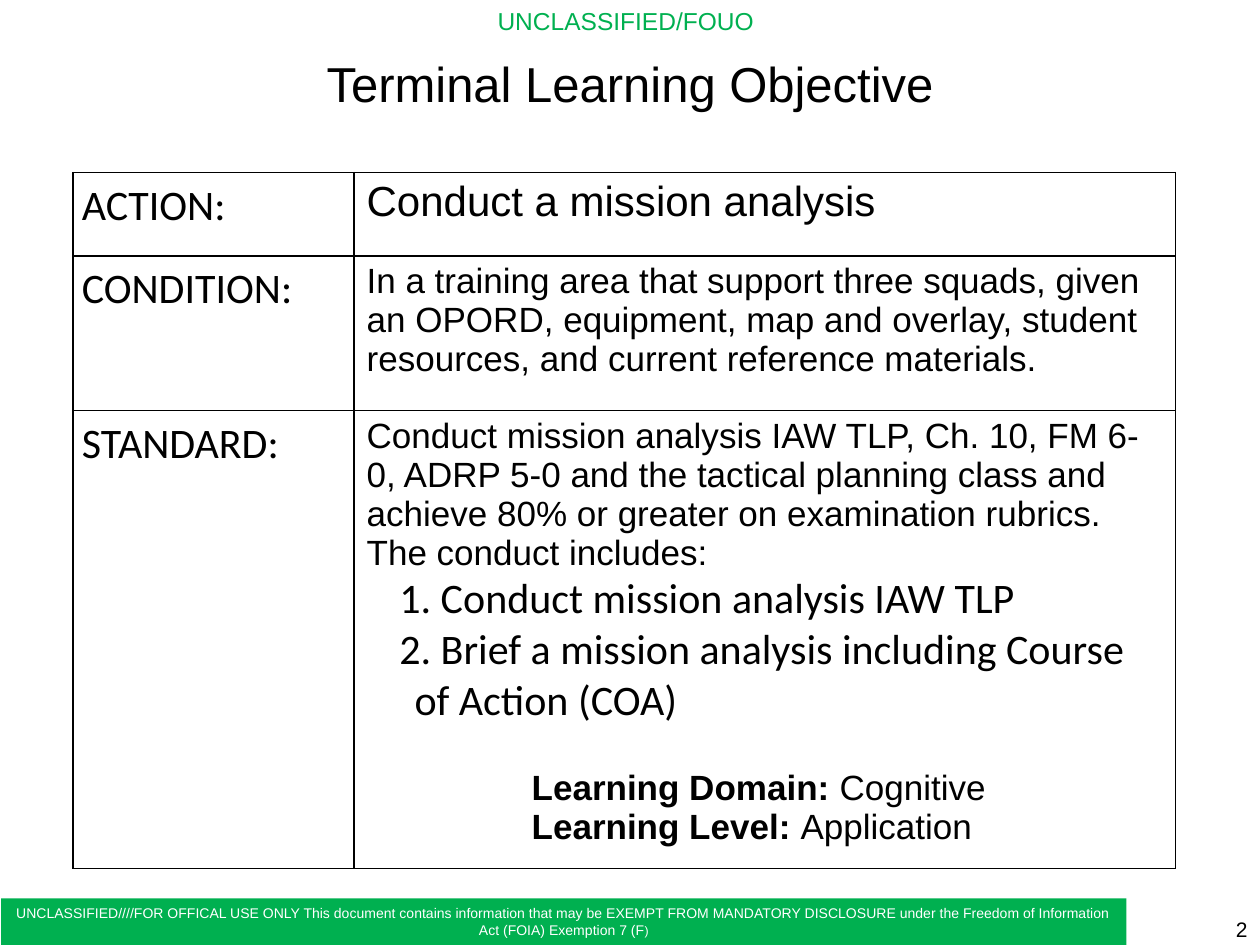
from dataclasses import dataclass

from lxml.etree import SubElement as Sub
from pptx import Presentation
from pptx.dml.color import RGBColor as RGB
from pptx.enum.shapes import MSO_SHAPE as Shape
from pptx.enum.text import MSO_ANCHOR as Anchor, PP_ALIGN as Align
from pptx.oxml.ns import qn
from pptx.util import Inches, Pt


@dataclass(frozen=True)
class Theme:
    sans: str = "Arial"
    label: str = "Calibri"
    black: RGB = RGB(0, 0, 0)
    white: RGB = RGB(255, 255, 255)
    green: RGB = RGB(0x00, 0xB0, 0x50)
    title: float = 28
    head: float = 24
    body: float = 20
    mark: float = 14
    page: float = 12
    foot: float = 8
    tiny: float = 7


T = Theme()


@dataclass(frozen=True)
class Run:
    text: str
    size: float = T.body
    font: str = T.sans
    color: RGB = T.black
    bold: bool = False


@dataclass(frozen=True)
class Para:
    runs: tuple[Run, ...]
    align: Align = Align.LEFT
    left: float = 0
    hang: float = 0
    auto: bool = False
    before: float = 0
    line: float = 1.0


@dataclass(frozen=True)
class Box:
    at: tuple[float, float, float, float]
    para: Para
    wrap: bool = True
    anchor: Anchor = Anchor.MIDDLE
    fill: RGB | None = None


@dataclass(frozen=True)
class Row:
    label: str
    height: float
    paras: tuple[Para, ...]


def write(frame, paras: tuple[Para, ...]) -> None:
    for i, item in enumerate(paras):
        para = frame.paragraphs[0] if i == 0 else frame.add_paragraph()
        para.alignment = item.align
        para.line_spacing = item.line
        if item.before:
            para.space_before = Pt(item.before)
        if item.left:
            props = para._p.get_or_add_pPr()
            props.set("marL", str(Inches(item.left)))
            props.set("indent", str(Inches(-item.hang)))
            if item.auto:
                Sub(props, qn("a:buFont"), typeface="+mj-lt")
                Sub(props, qn("a:buAutoNum"), type="arabicPeriod")
        for part in item.runs:
            run = para.add_run()
            run.text = part.text
            font = run.font
            font.name, font.size, font.bold = part.font, Pt(part.size), part.bold
            font.color.rgb = part.color


def draw_box(slide, box: Box) -> None:
    at = [Inches(n) for n in box.at]
    if box.fill is None:
        shape = slide.shapes.add_textbox(*at)
    else:
        shape = slide.shapes.add_shape(Shape.RECTANGLE, *at)
        shape.shadow.inherit = False
        shape.fill.solid()
        shape.fill.fore_color.rgb = box.fill
        shape.line.fill.background()
    frame = shape.text_frame
    frame.word_wrap = box.wrap
    frame.vertical_anchor = box.anchor
    write(frame, (box.para,))


def style(cell) -> None:
    props = cell._tc.get_or_add_tcPr()
    for side in ("lnL", "lnR", "lnT", "lnB"):
        line = Sub(props, qn(f"a:{side}"), w=str(Pt(1)))
        fill = Sub(line, qn("a:solidFill"))
        Sub(fill, qn("a:srgbClr"), val=str(T.black))
    cell.fill.solid()
    cell.fill.fore_color.rgb = T.white


def draw_table(slide, rows: tuple[Row, ...], left: float, top: float,
               widths: tuple[float, ...]) -> None:
    high = sum(row.height for row in rows)
    table = slide.shapes.add_table(
        len(rows), len(widths), Inches(left), Inches(top),
        Inches(sum(widths)), Inches(high)).table
    table.first_row = table.horz_banding = False
    for col, width in zip(table.columns, widths):
        col.width = Inches(width)
    for i, row in enumerate(rows):
        table.rows[i].height = Inches(row.height)
        name, text = table.cell(i, 0), table.cell(i, 1)
        style(name)
        style(text)
        name.margin_left = name.margin_right = Inches(0.07)
        name.margin_top = name.margin_bottom = 0
        write(name.text_frame,
              (Para((Run(row.label, T.head, T.label),), line=1.15),))
        write(text.text_frame, row.paras)


def step(text: str, left: float) -> Para:
    # The space parts the text from its number
    return Para((Run(" " + text, T.head, T.label),),
                left=left, hang=0.12, auto=True)


def level(name: str, value: str, before: float = 0) -> Para:
    return Para((Run(name + ": ", bold=True), Run(value)),
                left=1.31, before=before)


# Marking, footer, page number and title
BOXES = (
    Box((3.85, 0, 2.29, 0.34),
        Para((Run("UNCLASSIFIED/FOUO", T.mark, color=T.green),)),
        wrap=False, anchor=Anchor.TOP),
    Box((0.01, 7.13, 8.93, 0.37),
        Para((Run("UNCLASSIFIED////FOR OFFICAL USE ONLY "
                  "This document contains information that may be EXEMPT FROM "
                  "MANDATORY DISCLOSURE under the Freedom of Information Act "
                  "(FOIA) Exemption 7 (F", T.foot, color=T.white),
              Run(")", T.tiny, color=T.white)), Align.CENTER),
        anchor=Anchor.TOP, fill=T.green),
    Box((7.67, 7.25, 2.33, 0.25),
        Para((Run("2", T.page),), Align.RIGHT)),
    Box((0.5, 0.3, 9, 0.72),
        Para((Run("Terminal Learning Objective", T.title),), Align.CENTER)),
)

# Objective table
ROWS = (
    Row("ACTION:", 0.66,
        (Para((Run("Conduct a mission analysis", T.head),)),)),
    Row("CONDITION:", 1.23,
        (Para((Run("In a training area that support three squads, given an "
                   "OPORD, equipment, map and overlay, student resources, and "
                   "current reference materials."),)),)),
    Row("STANDARD:", 3.52, (
        Para((Run("Conduct mission analysis IAW TLP, Ch. 10, FM 6-0, ADRP 5-0 "
                  "and the tactical planning class and achieve 80% or greater "
                  "on examination rubrics. The conduct includes:"),)),
        step("Conduct mission analysis IAW TLP", 0.38),
        step("Brief a mission analysis including Course of Action (COA)", 0.38),
        level("Learning Domain", "Cognitive", before=24),
        level("Learning Level", "Application"))),
)


def main() -> None:
    deck = Presentation()
    deck.slide_width, deck.slide_height = Inches(10), Inches(7.5)
    slide = deck.slides.add_slide(deck.slide_layouts[6])
    for box in BOXES:
        draw_box(slide, box)
    draw_table(slide, ROWS, 0.58, 1.37, (2.23, 6.52))
    deck.save("out.pptx")


if __name__ == "__main__":
    main()
